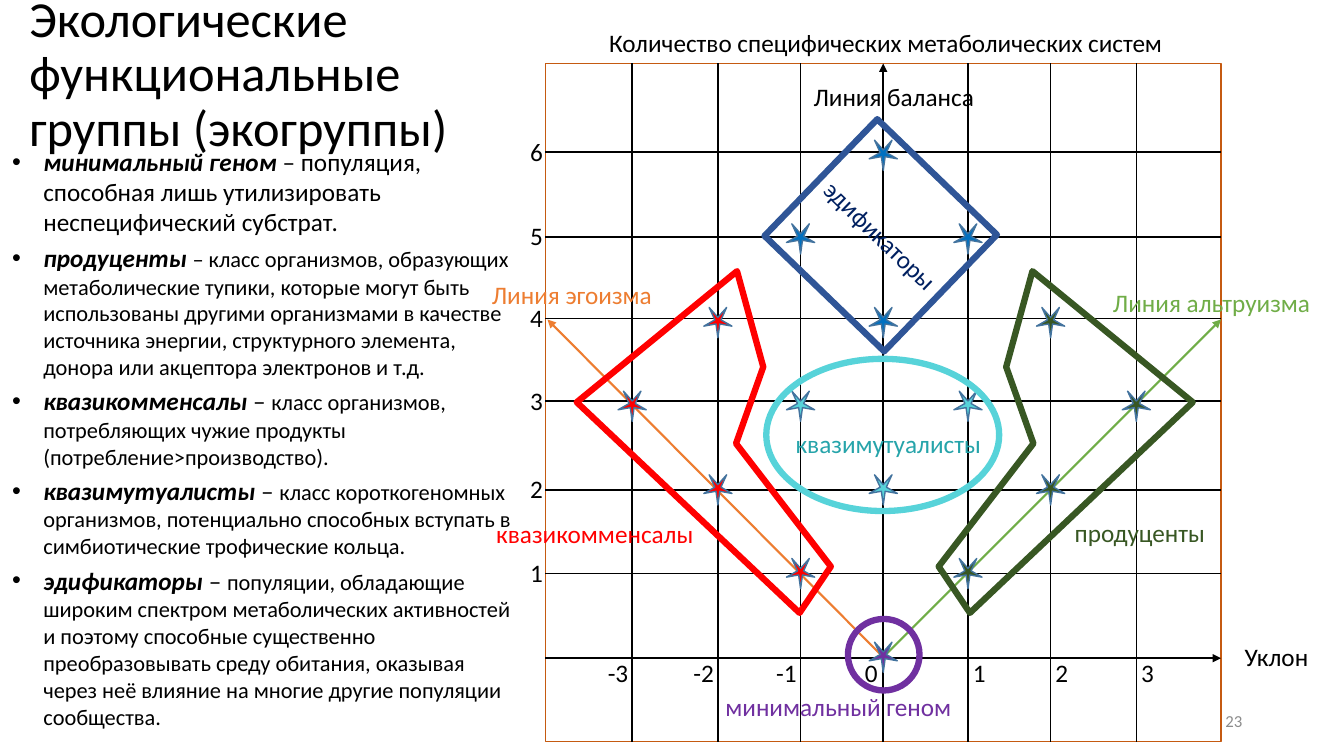
from dataclasses import dataclass

from lxml import etree
from pptx import Presentation
from pptx.dml.color import RGBColor
from pptx.enum.shapes import MSO_CONNECTOR, MSO_SHAPE
from pptx.enum.text import MSO_ANCHOR, MSO_AUTO_SIZE, PP_ALIGN
from pptx.oxml.ns import qn
from pptx.util import Pt

RECTANGLE, ELLIPSE, STAR = MSO_SHAPE.RECTANGLE, MSO_SHAPE.OVAL, MSO_SHAPE.STAR_5_POINT
STRAIGHT = MSO_CONNECTOR.STRAIGHT
LEFT, CENTER, RIGHT = PP_ALIGN.LEFT, PP_ALIGN.CENTER, PP_ALIGN.RIGHT
TOP, MIDDLE = MSO_ANCHOR.TOP, MSO_ANCHOR.MIDDLE
FIXED, GROW = MSO_AUTO_SIZE.NONE, MSO_AUTO_SIZE.SHAPE_TO_FIT_TEXT
PX = 9144  # EMU in one px, 100 px to the inch


@dataclass(frozen=True)
class Theme:
    font: str = "Calibri"
    title: int = 36
    text: int = 18
    detail: int = 16
    small: int = 12
    thin: float = 1
    arrow: float = 1.5
    thick: float = 4.5
    black: str = "000000"
    white: str = "FFFFFF"
    gray: str = "8C8C8C"
    frame: str = "C55A11"
    star_edge: str = "43739E"
    altruism: str = "70AD47"
    egoism: str = "ED7D31"
    blue: str = "0070C0"
    blue_edge: str = "2F5597"
    navy: str = "002060"
    cyan: str = "57D3D9"
    teal: str = "26A4AA"
    red: str = "FF0000"
    green: str = "385723"
    purple: str = "7030A0"


THEME = Theme()

GRID_LEFT, GRID_TOP, GRID_RIGHT, GRID_BOTTOM = 541, 63, 1211, 736
COLUMNS = {-3: 627, -2: 712, -1: 794, 0: 876, 1: 960, 2: 1042, 3: 1127}
ROWS = {1: 569, 2: 486, 3: 398, 4: 316, 5: 235, 6: 151}
BASE, STAR_STEP = 652, 83

# Star places as (deviation, number of metabolic systems)
GROUPS = [
    (THEME.blue, [(0, 6), (-1, 5), (1, 5), (0, 4)]),
    (THEME.cyan, [(-1, 3), (1, 3), (0, 2)]),
    (THEME.red, [(-1, 1), (-2, 2), (-3, 3), (-2, 4)]),
    (THEME.green, [(1, 1), (2, 2), (3, 3), (2, 4)]),
    (THEME.purple, [(0, 0)]),
]
PRODUCERS = [(962, 608), (1183, 399), (1024, 269), (998, 364), (1025, 440), (931, 562)]
MIRROR = 1755  # sum of the x of a point and of its mirrored point

LABELS = [
    ("Количество специфических метаболических систем", (591, 22, 575, 40), THEME.black, CENTER),
    ("Уклон", (1224, 631, 84, 40), THEME.black, CENTER),
    ("квазимутуалисты", (778, 420, 206, 40), THEME.teal, CENTER),
    ("квазикомменсалы", (481, 509, 218, 40), THEME.red, CENTER),
    ("продуценты", (1055, 508, 151, 40), THEME.green, CENTER),
    ("минимальный геном", (708, 681, 247, 40), THEME.purple, CENTER),
    ("Линия альтруизма", (1094, 280, 218, 40), THEME.altruism, LEFT),
    ("Линия эгоизма", (478, 272, 186, 40), THEME.egoism, LEFT),
    ("Линия баланса", (797, 76, 181, 40), THEME.black, LEFT),
]

# Term, text in the size of the term, text in the smaller size
DEFINITIONS = [
    ("минимальный геном", " – популяция, способная лишь утилизировать неспецифический субстрат.", ""),
    ("продуценты ", "", "– класс организмов, образующих метаболические тупики, которые могут быть "
     "использованы другими организмами в качестве источника энергии, структурного элемента, "
     "донора или акцептора электронов и т.д."),
    ("квазикомменсалы", " – ", "класс организмов, потребляющих чужие продукты "
     "(потребление>производство)."),
    ("квазимутуалисты", " – ", "класс короткогеномных организмов, потенциально способных "
     "вступать в симбиотические трофические кольца."),
    ("эдификаторы", " – ", "популяции, обладающие широким спектром метаболических активностей и "
     "поэтому способные существенно преобразовывать среду обитания, оказывая через неё влияние "
     "на многие другие популяции сообщества."),
]


def px(*lengths):
    return [length * PX for length in lengths]


def assign(target, **values):
    for name, value in values.items():
        setattr(target, name, value)


def place(shape, *area):
    assign(shape, **dict(zip(("left", "top", "width", "height"), px(*area))))


def add_span(para, text, size, color=THEME.black, **style):
    span = para.add_run()
    span.text = text
    assign(span.font, name=THEME.font, size=Pt(size), **style)
    span.font.color.rgb = RGBColor.from_string(color)


def add_label(page, text, area, color=THEME.black, align=LEFT):
    box = page.shapes.add_textbox(*px(*area))
    assign(box.text_frame, word_wrap=False, auto_size=GROW)
    para = box.text_frame.paragraphs[0]
    para.alignment = align
    add_span(para, text, THEME.text, color)


def add_page_number(page, number):
    box = page.shapes.add_textbox(*px(942, 695, 300, 40))
    assign(box.text_frame, word_wrap=True, auto_size=FIXED, vertical_anchor=MIDDLE)
    para = box.text_frame.paragraphs[0]
    para.alignment = RIGHT
    add_span(para, number, THEME.small, THEME.gray)


def paint(shape, line, width, fill=None):
    shape.shadow.inherit = False
    shape.line.color.rgb = RGBColor.from_string(line)
    shape.line.width = Pt(width)
    if fill:
        shape.fill.solid()
        shape.fill.fore_color.rgb = RGBColor.from_string(fill)
    else:
        shape.fill.background()


def add_figure(page, kind, area, line, width, fill=None):
    figure = page.shapes.add_shape(kind, *px(*area))
    paint(figure, line, width, fill)
    return figure


def add_polygon(page, points, color):
    builder = page.shapes.build_freeform(*points[0], scale=PX)
    builder.add_line_segments(points[1:], close=True)
    paint(builder.convert_to_shape(), color, THEME.thick)


def add_line(page, ends, color=THEME.black, arrow=False):
    connector = page.shapes.add_connector(STRAIGHT, *px(*ends))
    connector.line.color.rgb = RGBColor.from_string(color)
    connector.line.width = Pt(THEME.arrow if arrow else THEME.thin)
    properties = connector._element.spPr
    if arrow:
        etree.SubElement(properties.find(qn("a:ln")), qn("a:tailEnd"), type="triangle")
    etree.SubElement(properties, qn("a:effectLst"))


def add_star(page, column, row, color):
    area = (COLUMNS[column] - 14, BASE - STAR_STEP * row - 15, 28, 30)
    star = add_figure(page, STAR, area, THEME.star_edge, THEME.thin, color)
    star.rotation = 180
    star.adjustments[0] = 0.11


def fill_title(title):
    place(title, 19, -43, 510, 236)
    assign(title.text_frame, auto_size=FIXED, vertical_anchor=MIDDLE)
    para = title.text_frame.paragraphs[0]
    assign(para, alignment=LEFT, line_spacing=0.9)
    add_span(para, "Экологические функциональные группы (экогруппы)", THEME.title)


def fill_definitions(body):
    place(body, 2, 140, 515, 598)
    frame = body.text_frame
    assign(frame, auto_size=FIXED, vertical_anchor=TOP)
    for number, (term, lead, detail) in enumerate(DEFINITIONS):
        para = frame.add_paragraph() if number else frame.paragraphs[0]
        assign(para, space_before=Pt(0), space_after=Pt(4))
        properties = para._p.get_or_add_pPr()
        properties.set("marL", str(31 * PX))
        properties.set("indent", str(-31 * PX))
        add_span(para, term, THEME.text, bold=True, italic=True)
        for text, size in ((lead, THEME.text), (detail, THEME.detail)):
            if text:
                add_span(para, text, size)


def draw_grid(page):
    frame = (GRID_LEFT, GRID_TOP, GRID_RIGHT - GRID_LEFT, GRID_BOTTOM - GRID_TOP)
    add_figure(page, RECTANGLE, frame, THEME.frame, THEME.thin, THEME.white)
    origin = COLUMNS[0], BASE
    add_line(page, (*origin, GRID_RIGHT, 317), THEME.altruism, arrow=True)
    add_line(page, (*origin, GRID_LEFT + 2, 317), THEME.egoism, arrow=True)
    for column, x in COLUMNS.items():
        add_line(page, (x, GRID_BOTTOM, x, GRID_TOP), arrow=column == 0)
        shift = 34 if column < 0 else 5 if column else 28
        add_label(page, str(column), (x - shift, 647, 43 if column < 0 else 35, 43))
    add_line(page, (GRID_LEFT, BASE + 1, GRID_RIGHT, BASE + 1), arrow=True)
    for row, y in ROWS.items():
        add_line(page, (GRID_LEFT, y, GRID_RIGHT, y))
        add_label(page, str(row), (516, y - 21, 35, 43))


def draw_groups(page):
    for color, places in GROUPS:
        for column, row in places:
            add_star(page, column, row, color)
    diamond = add_figure(page, RECTANGLE, (791, 153, 165, 161), THEME.blue_edge, THEME.thick)
    diamond.rotation = 44
    diamond.text_frame.vertical_anchor = MIDDLE
    para = diamond.text_frame.paragraphs[0]
    para.alignment = CENTER
    add_span(para, "эдификаторы", THEME.text, THEME.navy)
    add_figure(page, ELLIPSE, (760, 356, 231, 151), THEME.cyan, THEME.thick)
    add_polygon(page, PRODUCERS, THEME.green)
    add_polygon(page, [(MIRROR - x, y) for x, y in PRODUCERS], THEME.red)
    add_figure(page, ELLIPSE, (841, 614, 71, 71), THEME.purple, THEME.thick)


def main():
    deck = Presentation()
    deck.slide_width, deck.slide_height = px(1333, 750)
    page = deck.slides.add_slide(deck.slide_layouts[1])
    fill_title(page.shapes.title)
    fill_definitions(page.placeholders[1])
    draw_grid(page)
    draw_groups(page)
    for label in LABELS:
        add_label(page, *label)
    add_page_number(page, "23")
    deck.save("out.pptx")


if __name__ == "__main__":
    main()
